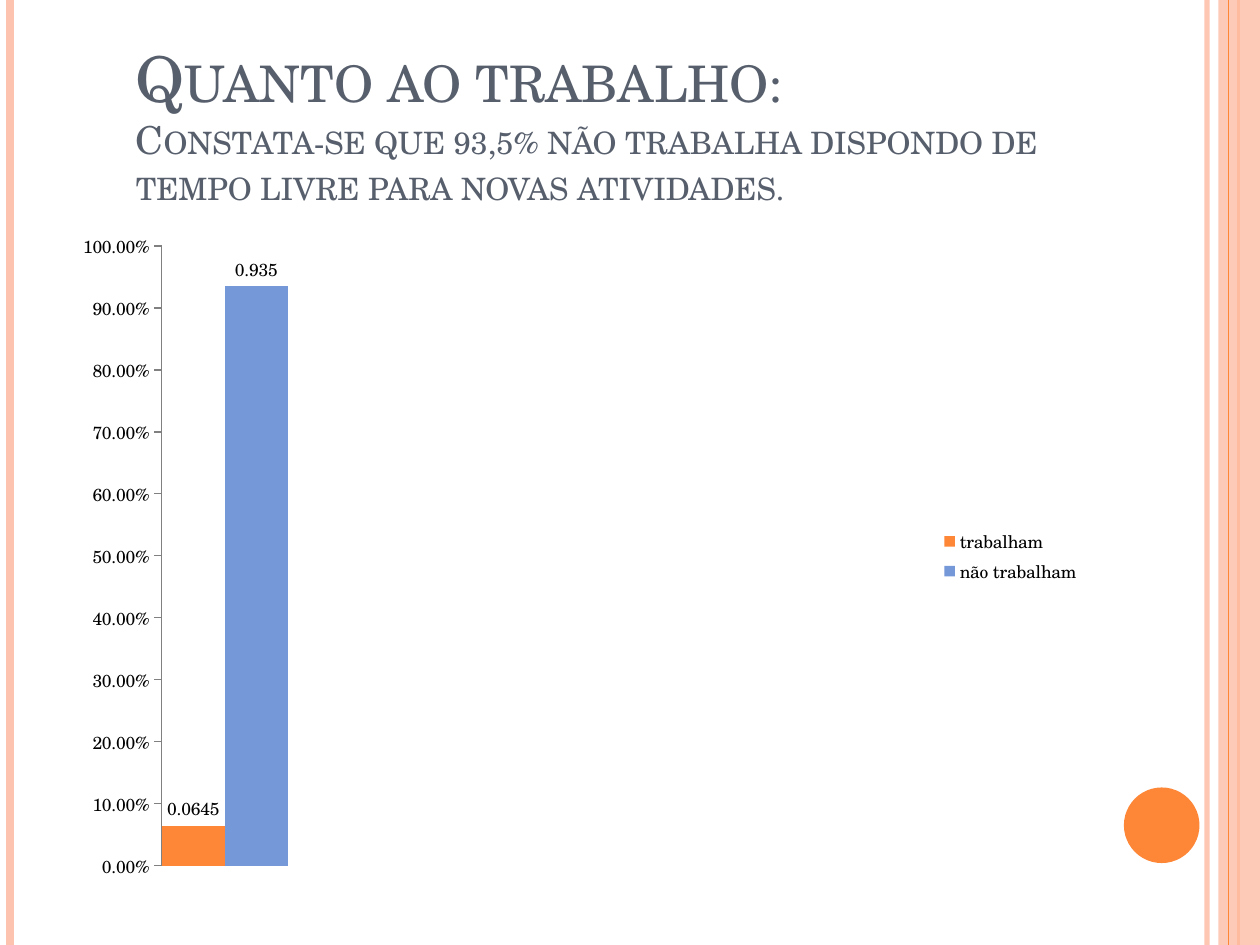
"""Build the slide on work status: a title, a column chart and the decorated margins."""
import pptx
import pptx.chart.data
import pptx.dml.color
import pptx.enum.chart
import pptx.enum.shapes
import pptx.enum.text
import pptx.oxml
import pptx.util
from lxml import etree
from pptx.util import Inches, Pt

FONT = "TeX Gyre Schola"
ORANGE, PEACH, SLATE = "FE8637", "FEC3AE", "575F6D"


def paint(fmt, color, alpha=None):
    fmt.solid()
    fmt.fore_color.rgb = pptx.dml.color.RGBColor.from_string(color)
    if alpha:
        clr = fmt._xPr.find(".//" + pptx.oxml.ns.qn("a:srgbClr"))
        etree.SubElement(clr, pptx.oxml.ns.qn("a:alpha")).set("val", str(alpha * 1000))


def add_rule(x, color, width, alpha=None):
    s = shapes.add_connector(pptx.enum.shapes.MSO_CONNECTOR.STRAIGHT,
                             Inches(x), 0, Inches(x), prs.slide_height)
    paint(s.line.fill, color, alpha)
    s.line.width = Pt(width)
    etree.SubElement(s._element.spPr, pptx.oxml.ns.qn("a:effectLst"))


prs = pptx.Presentation()
prs.slide_width, prs.slide_height = Inches(10), Inches(7.5)
shapes = prs.slides.add_slide(prs.slide_layouts[6]).shapes

add_rule(9.58, PEACH, 3, 93)
add_rule(0.08, PEACH, 4.5)
add_rule(9.83, ORANGE, 1.5)
band = shapes.add_shape(pptx.enum.shapes.MSO_SHAPE.RECTANGLE,
                        Inches(9.67), 0, Inches(0.33), prs.slide_height)
paint(band.fill, PEACH, 87)
add_rule(9.75, ORANGE, 0.75)
dot = shapes.add_shape(pptx.enum.shapes.MSO_SHAPE.OVAL,
                       Inches(8.92), Inches(6.25), Inches(0.6), Inches(0.6))
paint(dot.fill, ORANGE)
for s in (band, dot):
    s.line.fill.background()
    s.shadow.inherit = False

title = shapes.add_textbox(Inches(0.98), 0, Inches(8.08), Inches(1.7))
tf = title.text_frame
tf.word_wrap = True
tf.vertical_anchor = pptx.enum.text.MSO_ANCHOR.BOTTOM
p = tf.paragraphs[0]
p.text = ("Quanto ao trabalho:\vConstata-se que 93,5% não trabalha dispondo de "
          "tempo livre para novas atividades.")
for r, size in zip(p.runs, (36, 22)):
    r.font.name = FONT
    r.font.size = Pt(size)
    paint(r.font.fill, SLATE)
    r.font._element.set("cap", "small")

data = pptx.chart.data.CategoryChartData()
data.categories = ["1", "", "", ""]
columns = [("trabalham", 0.0645, ORANGE), ("não trabalham", 0.935, "7598D9"),
           ("Series 3", None, "B32C16")]
for name, value, color in columns:
    data.add_series(name, [value, None, None, None])
chart = shapes.add_chart(pptx.enum.chart.XL_CHART_TYPE.COLUMN_CLUSTERED, Inches(0.5),
                         Inches(1.75), Inches(8.17), Inches(5.33), data).chart
chart.has_title = False
chart.font.name = FONT
chart.font.size = Pt(10)
paint(chart.font.fill, "000000")

plot = chart.plots[0]
plot.vary_by_categories = False
plot.gap_width = 0
plot.overlap = 0
for series, (name, value, color) in zip(plot.series, columns):
    paint(series.format.fill, color)
    if value is not None:
        labels = series.data_labels
        labels.show_value = True
        labels.number_format = "General"
        labels.number_format_is_linked = False
        labels.position = pptx.enum.chart.XL_LABEL_POSITION.OUTSIDE_END

chart.category_axis.visible = False
axis = chart.value_axis
axis.has_major_gridlines = False
axis.minimum_scale, axis.maximum_scale, axis.major_unit = 0, 1, 0.1
axis.major_tick_mark = pptx.enum.chart.XL_TICK_MARK.OUTSIDE
axis.tick_labels.number_format = "0.00%"
axis.tick_labels.number_format_is_linked = False
paint(axis.format.line.fill, "808080")

chart.has_legend = True
legend = chart.legend
legend.position = pptx.enum.chart.XL_LEGEND_POSITION.RIGHT
legend.include_in_layout = False
entry = pptx.oxml.parse_xml(
    f'<c:legendEntry {pptx.oxml.ns.nsdecls("c")}><c:idx val="2"/><c:delete val="1"/></c:legendEntry>')
legend._element.insert(1, entry)

area = chart._chartSpace.chart.plotArea
for old in area.findall(pptx.oxml.ns.qn("c:layout")):
    area.remove(old)
layout = etree.Element(pptx.oxml.ns.qn("c:layout"))
manual = etree.SubElement(layout, pptx.oxml.ns.qn("c:manualLayout"))
for tag, val in (("layoutTarget", "inner"), ("xMode", "edge"), ("yMode", "edge"),
                 ("x", "0.096"), ("y", "0.038"), ("w", "0.735"), ("h", "0.923")):
    etree.SubElement(manual, pptx.oxml.ns.qn("c:" + tag)).set("val", val)
area.insert(0, layout)

prs.save("out.pptx")
